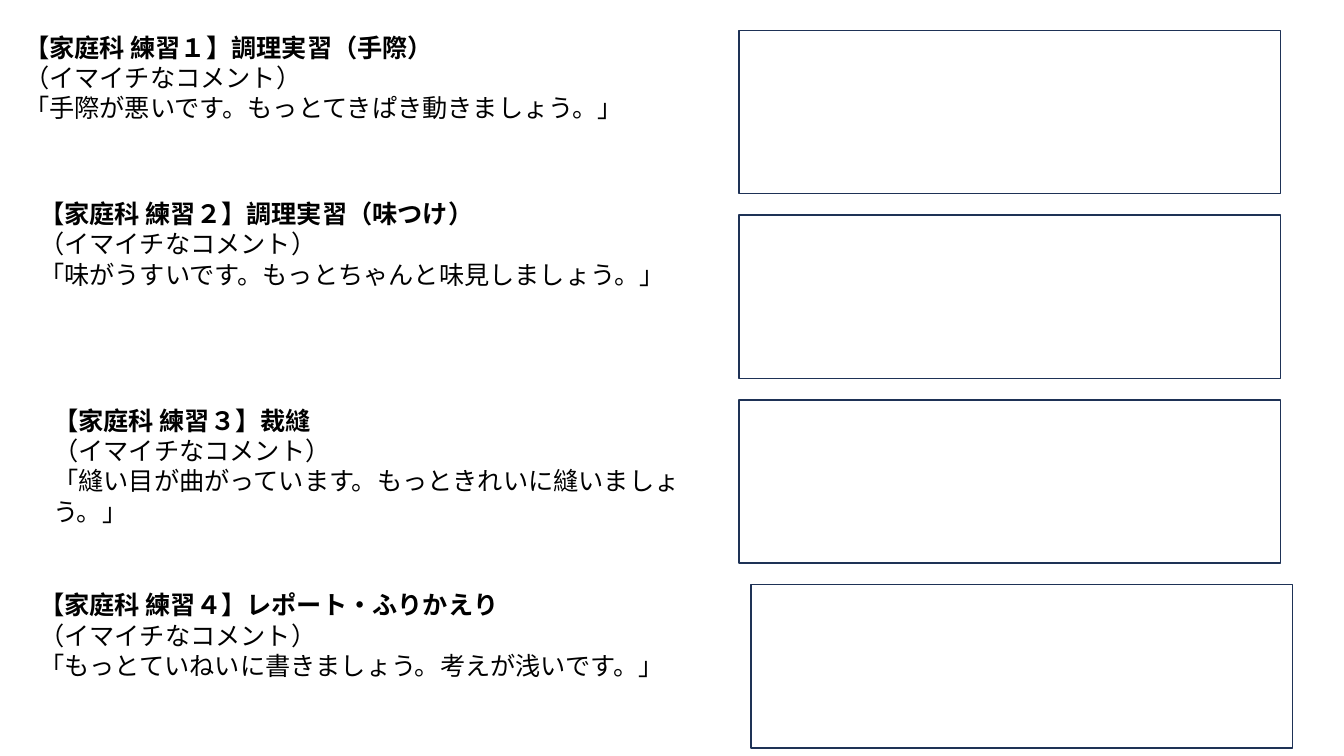
from pptx import Presentation
from pptx.dml.color import RGBColor
from pptx.enum.shapes import MSO_SHAPE
from pptx.enum.text import MSO_AUTO_SIZE
from pptx.oxml.ns import qn
from pptx.util import Inches, Pt
from lxml import etree

RECTANGLE = MSO_SHAPE.RECTANGLE
GROW = MSO_AUTO_SIZE.SHAPE_TO_FIT_TEXT

WEAK_LABEL = "（イマイチなコメント）"
EXERCISES = [
    ("【家庭科 練習１】調理実習（手際）",
     "「手際が悪いです。もっとてきぱき動きましょう。」", 0.14, 0.27, 1.01, 7.33),
    ("【家庭科 練習２】調理実習（味つけ）",
     "「味がうすいです。もっとちゃんと味見しましょう。」", 0.29, 1.92, 1.01, 7.33),
    ("【家庭科 練習３】裁縫",
     "「縫い目が曲がっています。もっときれいに縫いましょう。」", 0.43, 3.97, 1.31, 7.33),
    ("【家庭科 練習４】レポート・ふりかえり",
     "「もっとていねいに書きましょう。考えが浅いです。」", 0.29, 5.8, 1.01, 7.45),
]
FIRST_ANSWER_TOP = 0.3
LAST_ANSWER_TOP = 5.8


def color(value):
    return RGBColor.from_string(value)


class Worksheet:
    typeface = "Noto Sans CJK JP"
    ink = "000000"
    paper = "FFFFFF"
    border = "1E3256"

    def __init__(self, slide):
        self.slide = slide

    def answer_box(self, left, top, width=5.37, height=1.62):
        box = self.slide.shapes.add_shape(
            RECTANGLE, Inches(left), Inches(top), Inches(width), Inches(height))
        box.shadow.inherit = False
        box.fill.solid()
        box.fill.fore_color.rgb = color(self.paper)
        box.line.color.rgb = color(self.border)
        box.line.width = Pt(1)

    def comment(self, lines, left, top, height, width=6.67):
        frame = self.slide.shapes.add_textbox(
            Inches(left), Inches(top), Inches(width), Inches(height)).text_frame
        for name, value in {"word_wrap": True, "auto_size": GROW}.items():
            setattr(frame, name, value)
        for index, line in enumerate(lines):
            paragraph = frame.add_paragraph() if index else frame.paragraphs[0]
            run = paragraph.add_run()
            run.text = line
            run.font.color.rgb = color(self.ink)
            style = {"name": self.typeface, "size": Pt(18), "bold": index == 0}
            for name, value in style.items():
                setattr(run.font, name, value)
            east_asian = etree.SubElement(run._r.get_or_add_rPr(), qn("a:ea"))
            east_asian.set("typeface", self.typeface)


def main():
    deck = Presentation()
    deck.slide_width = Inches(13.33)
    deck.slide_height = Inches(7.5)
    sheet = Worksheet(deck.slides.add_slide(deck.slide_layouts[6]))
    pitch = (LAST_ANSWER_TOP - FIRST_ANSWER_TOP) / (len(EXERCISES) - 1)
    for index, (title, quote, left, top, height, answer_left) in enumerate(EXERCISES):
        sheet.answer_box(answer_left, FIRST_ANSWER_TOP + index * pitch)
        sheet.comment([title, WEAK_LABEL, quote], left, top, height)
    deck.save("out.pptx")


if __name__ == "__main__":
    main()
